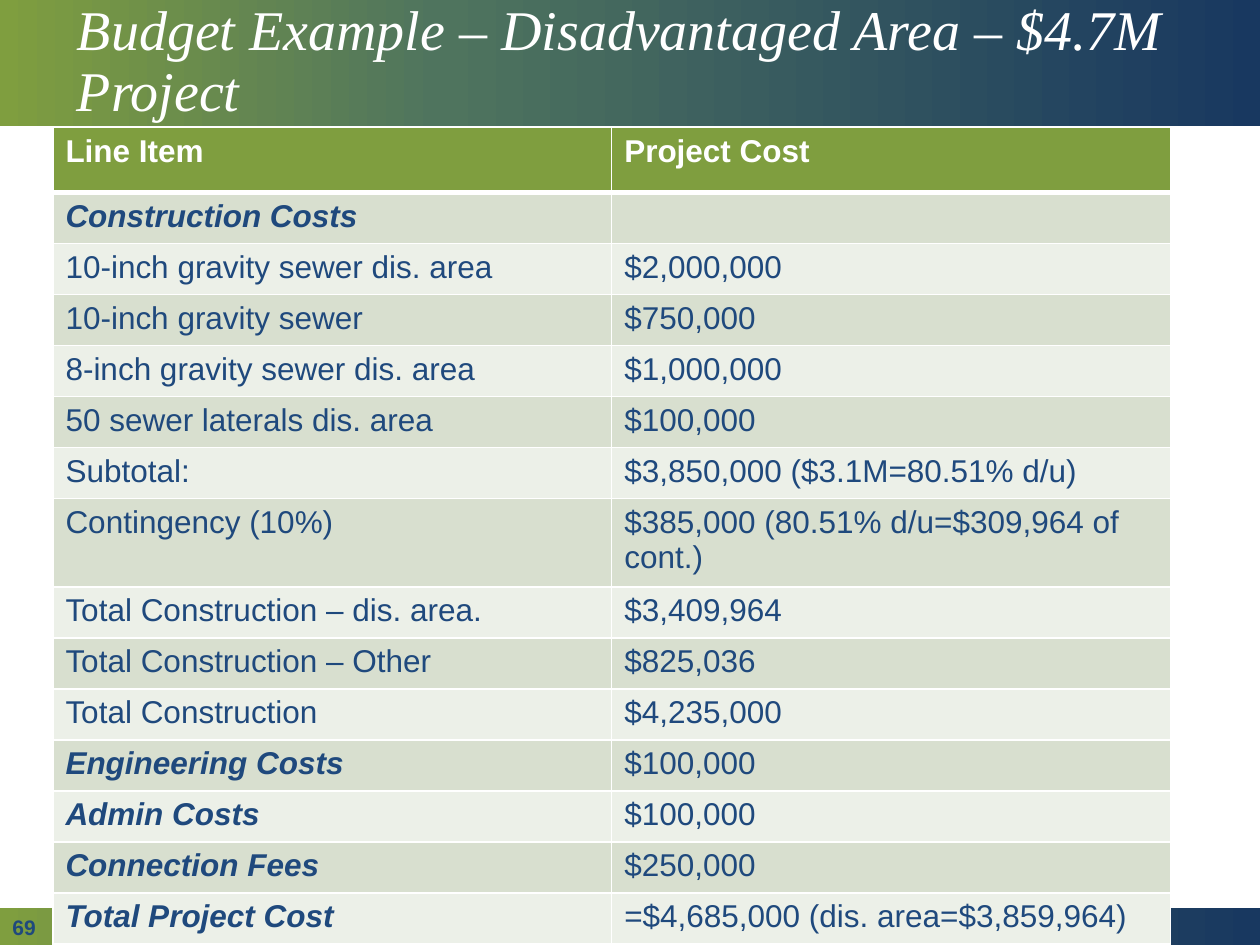
"""Build a slide with a project budget table between two gradient bars."""
from copy import deepcopy

from lxml.etree import SubElement
from pptx import Presentation
from pptx.dml.color import RGBColor
from pptx.enum.shapes import MSO_SHAPE as SHAPE
from pptx.enum.text import MSO_ANCHOR as ANCHOR, PP_ALIGN as ALIGN
from pptx.oxml.ns import qn
from pptx.util import Inches, Pt

GREEN, NAVY, WHITE = "7F9E3F", "1F497D", "FFFFFF"
BANDS = ("D8DFCF", "ECF0E8")
GRADIENT = ((0, GREEN), (0.35, "4F745E"), (1, "183860"))
HEADER = ("Line Item", "Project Cost")
ITEMS = (
    ("Construction Costs", ""),
    ("10-inch gravity sewer dis. area", "$2,000,000"),
    ("10-inch gravity sewer", "$750,000"),
    ("8-inch gravity sewer dis. area", "$1,000,000"),
    ("50 sewer laterals dis. area", "$100,000"),
    ("Subtotal:", "$3,850,000 ($3.1M=80.51% d/u)"),
    ("Contingency (10%)", "$385,000 (80.51% d/u=$309,964 of cont.)"),
    ("Total Construction – dis. area.", "$3,409,964"),
    ("Total Construction – Other", "$825,036"),
    ("Total Construction", "$4,235,000"),
    ("Engineering Costs", "$100,000"),
    ("Admin Costs", "$100,000"),
    ("Connection Fees", "$250,000"),
    ("Total Project Cost", "=$4,685,000 (dis. area=$3,859,964)"),
)
SECTIONS = {"Construction Costs", "Engineering Costs", "Admin Costs",
            "Connection Fees", "Total Project Cost"}


def rgb(color):
    return RGBColor.from_string(color)


def write(tf, text, size=18, font="Arial", color=NAVY, bold=False,
          italic=False, spacing=None):
    p = tf.paragraphs[0]
    p.alignment = ALIGN.LEFT
    if spacing:
        p.line_spacing = spacing
    if not text:
        p.font.size = Pt(size)
        return
    r = p.add_run()
    r.text = text
    f = r.font
    f.name, f.size, f.bold, f.italic = font, Pt(size), bold, italic
    f.color.rgb = rgb(color)


class Slide:
    def __init__(self, prs):
        self.s = prs.slides.add_slide(prs.slide_layouts[5])

    def bar(self, x, y, w, h):
        sp = self.s.shapes.add_shape(SHAPE.RECTANGLE, Inches(x), Inches(y),
                                     Inches(w), Inches(h))
        sp.shadow.inherit = False
        sp.line.fill.background()
        sp.fill.gradient()
        sp.fill.gradient_angle = 0
        gs = next(sp.element.iter(qn("a:gs")))
        gs.addnext(deepcopy(gs))
        for stop, (position, color) in zip(sp.fill.gradient_stops, GRADIENT):
            stop.position = position
            stop.color.rgb = rgb(color)

    def title(self, text, x, y, w, h):
        sp = self.s.shapes.title
        self.s.shapes.element.append(sp.element)
        sp.left, sp.top, sp.width, sp.height = map(Inches, (x, y, w, h))
        sp.text_frame.vertical_anchor = ANCHOR.MIDDLE
        write(sp.text_frame, text, size=32, font="Times New Roman",
              color=WHITE, italic=True, spacing=0.9)

    def text(self, text, x, y, w, h, **style):
        tf = self.s.shapes.add_textbox(Inches(x), Inches(y), Inches(w),
                                       Inches(h)).text_frame
        tf.word_wrap = True
        tf.vertical_anchor = ANCHOR.MIDDLE
        write(tf, text, **style)

    def cell(self, cell, text, fill, top=1, bottom=1, **style):
        tcPr = cell._tc.get_or_add_tcPr()
        for side, width in zip("LRTB", (1, 1, top, bottom)):
            ln = SubElement(tcPr, qn(f"a:ln{side}"), w=str(Pt(width)))
            solid = SubElement(ln, qn("a:solidFill"))
            SubElement(solid, qn("a:srgbClr"), val=WHITE)
        cell.fill.solid()
        cell.fill.fore_color.rgb = rgb(fill)
        write(cell.text_frame, text, **style)

    def table(self, x, y, w, h, header_height):
        tbl = self.s.shapes.add_table(len(ITEMS) + 1, len(HEADER), Inches(x),
                                      Inches(y), Inches(w), Inches(h)).table
        for row in tbl.rows:
            row.height = Inches((h - header_height) / len(ITEMS))
        tbl.rows[0].height = Inches(header_height)
        for j, text in enumerate(HEADER):
            self.cell(tbl.cell(0, j), text, GREEN, bottom=3, color=WHITE,
                      bold=True)
        for i, item in enumerate(ITEMS):
            for j, text in enumerate(item):
                strong = text in SECTIONS
                self.cell(tbl.cell(i + 1, j), text, BANDS[i % 2],
                          top=1 if i else 3, bold=strong, italic=strong)


def main():
    prs = Presentation()
    prs.slide_width, prs.slide_height = Inches(10), Inches(7.5)
    slide = Slide(prs)
    slide.bar(0, 0, 10, 1)
    slide.bar(0, 7.21, 10, 0.29)
    slide.title("Budget Example – Disadvantaged Area – $4.7M Project",
                0.51, 0, 9.1, 1)
    slide.text("69", 0, 7.21, 2.25, 0.29, size=12, bold=True)
    slide.table(0.42, 1.01, 8.87, 6.19, header_height=0.52)
    prs.save("out.pptx")


if __name__ == "__main__":
    main()
